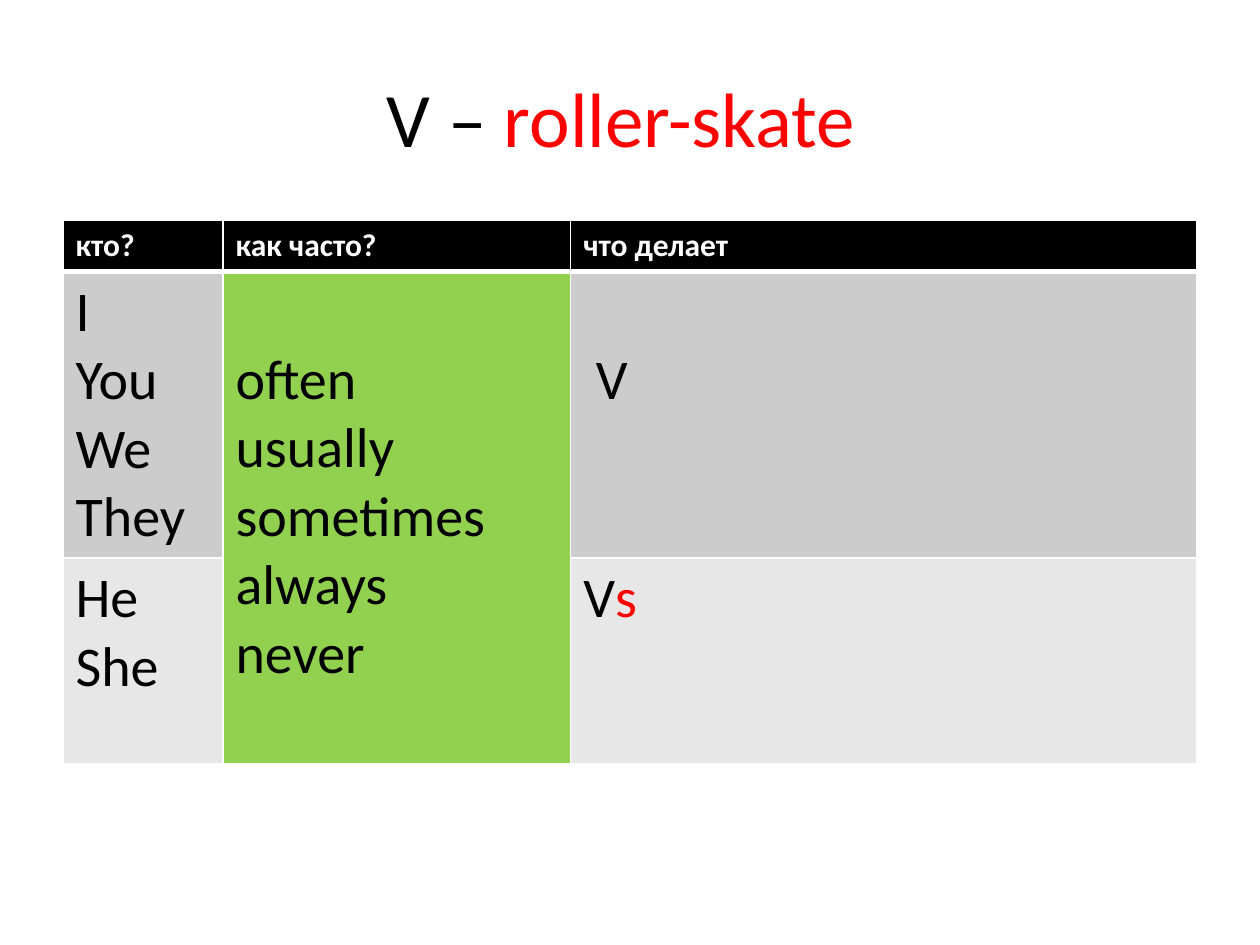
from dataclasses import dataclass

from lxml import etree
from pptx import Presentation
from pptx.dml.color import RGBColor
from pptx.enum.text import MSO_ANCHOR, PP_ALIGN
from pptx.oxml.ns import qn
from pptx.util import Inches, Pt

CENTER = PP_ALIGN.CENTER
MIDDLE = MSO_ANCHOR.MIDDLE
FONT = "Calibri"
COLORS = {
    "black": "000000",
    "white": "FFFFFF",
    "red": "FF0000",
    "green": "92D050",
    "dark_band": "CCCCCC",
    "light_band": "E7E7E7",
}
COL_WIDTHS = (1.27, 2.76, 4.97)
ROW_HEIGHTS = (0.4, 2.27, 1.63)
MARGIN_TOP = 0.05
LINE_HEIGHT = 0.54


@dataclass
class Cell:
    row: int
    col: int
    lines: tuple[str, ...]
    fill: str
    color: str = "black"
    size: int = 32
    bold: bool = False
    skipped_lines: int = 0


HEADERS = [
    Cell(0, col, (text,), "black", "white", 18, True)
    for col, text in enumerate(("кто?", "как часто?", "что делает"))
]
BODY = [
    Cell(1, 0, ("I", "You", "We", "They"), "dark_band"),
    Cell(1, 1, ("often", "usually", "sometimes", "always", "never"),
         "green", skipped_lines=1),
    Cell(1, 2, (" V",), "dark_band", skipped_lines=1),
    Cell(2, 0, ("He", "She"), "light_band"),
    Cell(2, 2, ("V",), "light_band"),
]


def rgb(name: str) -> RGBColor:
    return RGBColor.from_string(COLORS[name])


def add_run(p, text: str, size: int, color: str, bold: bool = False) -> None:
    r = p.add_run()
    r.text = text
    r.font.name = FONT
    r.font.size = Pt(size)
    r.font.bold = bold
    r.font.color.rgb = rgb(color)


def add_borders(cell, bottom: int) -> None:
    tc_pr = cell._tc.get_or_add_tcPr()
    for side, width in (("L", 1), ("R", 1), ("T", 1), ("B", bottom)):
        ln = etree.SubElement(tc_pr, qn(f"a:ln{side}"), w=str(Pt(width)))
        fill = etree.SubElement(ln, qn("a:solidFill"))
        etree.SubElement(fill, qn("a:srgbClr"), val=COLORS["white"])


def fill_cell(table, spec: Cell) -> None:
    cell = table.cell(spec.row, spec.col)
    cell.fill.solid()
    cell.fill.fore_color.rgb = rgb(spec.fill)
    cell.margin_top = Inches(MARGIN_TOP + spec.skipped_lines * LINE_HEIGHT)
    tf = cell.text_frame
    for i, line in enumerate(spec.lines):
        p = tf.add_paragraph() if i else tf.paragraphs[0]
        add_run(p, line, spec.size, spec.color, spec.bold)


def add_title(s) -> None:
    title = s.shapes.title
    title.left, title.top = Inches(0.5), Inches(0.3)
    title.width, title.height = Inches(9), Inches(1.25)
    tf = title.text_frame
    tf.vertical_anchor = MIDDLE
    p = tf.paragraphs[0]
    p.alignment = CENTER
    add_run(p, "V –", 44, "black")
    add_run(p, " roller-skate ", 44, "red")


def add_verb_table(s) -> None:
    table = s.shapes.add_table(
        len(ROW_HEIGHTS), len(COL_WIDTHS), Inches(0.5), Inches(1.75),
        Inches(sum(COL_WIDTHS)), Inches(sum(ROW_HEIGHTS))).table
    for col, width in zip(table.columns, COL_WIDTHS):
        col.width = Inches(width)
    for i, (row, height) in enumerate(zip(table.rows, ROW_HEIGHTS)):
        row.height = Inches(height)
        for cell in row.cells:
            add_borders(cell, 1 if i else 3)
    table.cell(1, 1).merge(table.cell(2, 1))
    for spec in HEADERS + BODY:
        fill_cell(table, spec)
    add_run(table.cell(2, 2).text_frame.paragraphs[0], "s", 32, "red")


def main() -> None:
    prs = Presentation()
    prs.slide_width, prs.slide_height = Inches(10), Inches(7.5)
    s = prs.slides.add_slide(prs.slide_layouts[5])
    add_title(s)
    add_verb_table(s)
    prs.save("out.pptx")


if __name__ == "__main__":
    main()
